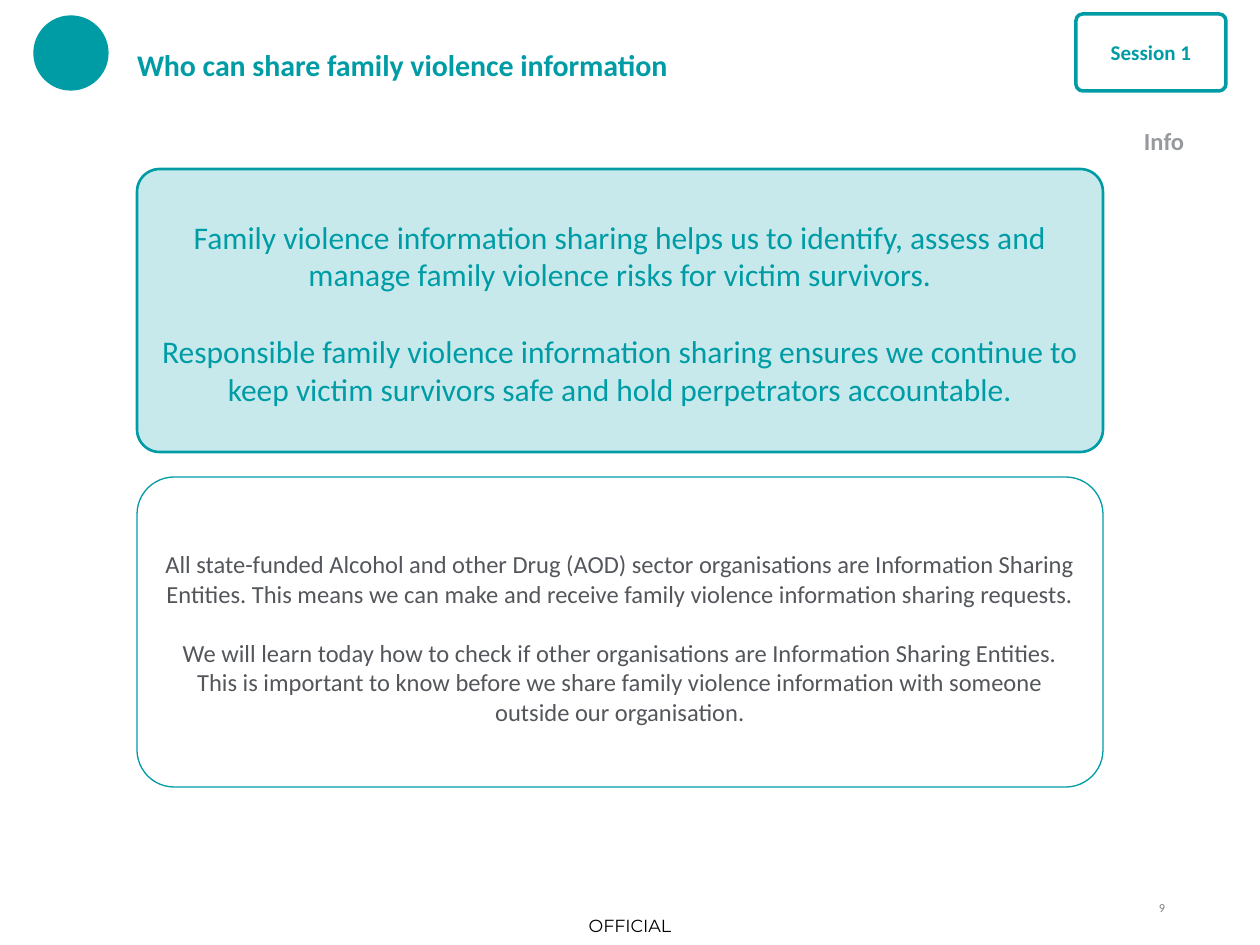
from pptx import Presentation
from pptx.dml.color import RGBColor
from pptx.enum.shapes import MSO_SHAPE
from pptx.enum.text import MSO_ANCHOR, PP_ALIGN
from pptx.oxml.ns import qn
from pptx.util import Emu, Pt
from lxml.etree import SubElement

PX = 914400 // 126
COLOURS = {"teal": "009CA6", "white": "FFFFFF", "slate": "53565A",
           "grey": "96999E", "dim": "7F7F7F", "black": "000000"}
LEFT, WIDTH = 137, 966  # column shared by the title and both panels

# Content: place in px, paragraphs, text format
LABELS = [
    dict(place=(566, 906, 128, 39), lines=["OFFICIAL"], size=10, colour="black",
         font="Montserrat", align="CENTER", anchor="MIDDLE"),
    dict(place=(1131, 120, 120, 43), lines=["Info"], size=14, colour="grey",
         bold=True, insets=(13, 6, 13, 6)),
    dict(place=(LEFT, 24, 864, 82), lines=["Who can share family violence information"],
         size=17.1, colour="teal", bold=True, anchor="MIDDLE"),
    dict(place=(1123, 900, 42, 25), lines=["9"], size=7, colour="dim", align="RIGHT"),
]
SHAPES = [
    dict(kind="OVAL", place=(34, 16, 74, 74), fill="teal", line=0.75),
    dict(kind="ROUNDED_RECTANGLE", place=(1076, 14, 150, 77), corner=0.09,
         fill="white", line=2, lines=["Session 1"], size=12, colour="teal",
         bold=True, insets=(25, 6, 25, 6)),
    dict(kind="ROUNDED_RECTANGLE", place=(LEFT, 169, WIDTH, 283), corner=0.08,
         fill="teal", alpha=22, line=1.5, size=18, colour="teal", gap=22,
         insets=(13, 10, 13, 6), lines=[
             "Family violence information sharing helps us to identify, assess and "
             "manage family violence risks for victim survivors.",
             "Responsible family violence information sharing ensures we continue to "
             "keep victim survivors safe and hold perpetrators accountable."]),
    dict(kind="ROUNDED_RECTANGLE", place=(LEFT, 477, WIDTH, 310), corner=0.12,
         line=0.75, size=14, colour="slate", gap=17, insets=(13, 17, 13, 6), lines=[
             "All state-funded Alcohol and other Drug (AOD) sector organisations are "
             "Information Sharing Entities. This means we can make and receive family "
             "violence information sharing requests.",
             "We will learn today how to check if other organisations are Information "
             "Sharing Entities. This is important to know before we share family "
             "violence information with someone outside our organisation."]),
]


def rgb(name):
    return RGBColor.from_string(COLOURS[name])


def scaled(lengths):
    return [Emu(length * PX) for length in lengths]


def write(box, item, align, anchor):
    frame = box.text_frame
    frame.word_wrap = True
    frame.vertical_anchor = MSO_ANCHOR[item.get("anchor", anchor)]
    sides = ("left", "top", "right", "bottom")
    for side, inset in zip(sides, scaled(item.get("insets", (0, 0, 0, 0)))):
        setattr(frame, f"margin_{side}", inset)
    formats = {"name": item.get("font", "Calibri"), "size": Pt(item["size"]),
               "bold": item.get("bold", False)}
    for index, line in enumerate(item["lines"]):
        para = frame.add_paragraph() if index else frame.paragraphs[0]
        para.alignment = PP_ALIGN[item.get("align", align)]
        if index:
            para.space_before = Pt(item["gap"])
        span = para.add_run()
        span.text = line
        span.font.color.rgb = rgb(item["colour"])
        for key, value in formats.items():
            setattr(span.font, key, value)


def draw(page, item):
    shape = page.shapes.add_shape(MSO_SHAPE[item["kind"]], *scaled(item["place"]))
    shape.shadow.inherit = False
    if "corner" in item:
        shape.adjustments[0] = item["corner"]
    if "fill" in item:
        shape.fill.solid()
        shape.fill.fore_color.rgb = rgb(item["fill"])
    else:
        shape.fill.background()
    if "alpha" in item:
        colour = shape.fill._xPr.find(qn("a:solidFill"))[0]
        SubElement(colour, qn("a:alpha")).set("val", str(item["alpha"] * 1000))
    shape.line.color.rgb = rgb("teal")
    shape.line.width = Pt(item["line"])
    if "lines" in item:
        write(shape, item, "CENTER", "MIDDLE")


def main():
    deck = Presentation()
    deck.slide_width, deck.slide_height = scaled((1260, 945))
    page = deck.slides.add_slide(deck.slide_layouts[6])
    for item in SHAPES:
        draw(page, item)
    for item in LABELS:
        write(page.shapes.add_textbox(*scaled(item["place"])), item, "LEFT", "TOP")
    deck.save("out.pptx")


if __name__ == "__main__":
    main()
